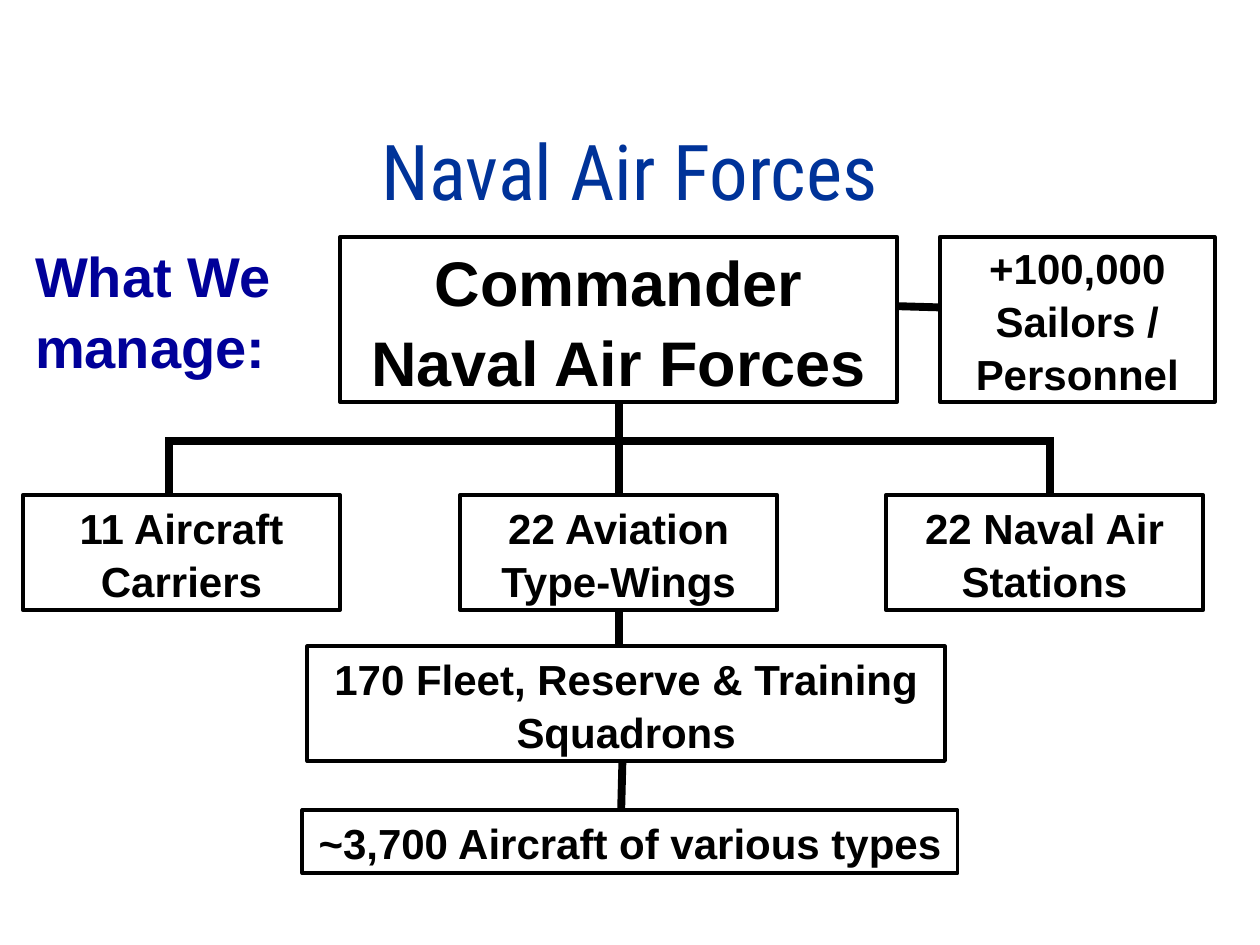
from lxml.etree import SubElement
from pptx import Presentation
from pptx.dml.color import RGBColor as RGB
from pptx.enum.shapes import MSO_CONNECTOR as CONN, MSO_SHAPE as SHAPE
from pptx.enum.text import MSO_ANCHOR as ANCHOR, PP_ALIGN as ALIGN
from pptx.oxml.ns import qn
from pptx.util import Inches, Pt

COLORS = {"title": "003399", "lead": "000099", "ink": "000000"}

prs = Presentation()
prs.slide_width, prs.slide_height = Inches(10), Inches(7.5)
s = prs.slides.add_slide(prs.slide_layouts[5])


def write(sp, text, size, color, font="Arial", bold=True, align=ALIGN.CENTER, spacing=1.05):
    tf = sp.text_frame
    tf.word_wrap = True
    tf.vertical_anchor = ANCHOR.MIDDLE
    p = tf.paragraphs[0]
    p.alignment = align
    p.line_spacing = spacing
    r = p.add_run()
    r.text = text
    r.font.name, r.font.size, r.font.bold = font, Pt(size), bold
    r.font.color.rgb = RGB.from_string(COLORS[color])


def link(x1, y1, x2, y2, begin=None, end=None):
    """Draw a thick line; begin and end name boxes joined at bottom and top."""
    c = s.shapes.add_connector(CONN.STRAIGHT, Inches(x1), Inches(y1), Inches(x2), Inches(y2))
    if begin:
        c.begin_connect(boxes[begin], 2)
    if end:
        c.end_connect(boxes[end], 0)
    c.line.color.rgb = RGB.from_string(COLORS["ink"])
    c.line.width = Pt(4.5)
    SubElement(c._element.spPr, qn("a:effectLst"))


# Title
title = s.shapes.title
title.left, title.top = 0, Inches(0.93)
title.width, title.height = prs.slide_width, Inches(0.83)
write(title, "Naval Air Forces", 44, "title", "Roboto Condensed", False, spacing=1)

# Rows of the chart: top and height
top_row, unit_row = (1.88, 1.31), (3.93, 0.91)
squadron_row, aircraft_row = (5.13, 0.91), (6.43, 0.5)
bus_y, trunk_x = 3.5, 4.91
unit_w = 2.52

# Boxes: name, left, width, row, text size, text
boxes = {}
for name, left, width, (top, height), size, text in [
    ("commander", 2.7, 4.42, top_row, 36, "Commander Naval Air Forces"),
    ("personnel", 7.46, 2.18, top_row, 24, "+100,000 Sailors / Personnel"),
    ("carriers", 0.18, unit_w, unit_row, 24, "11 Aircraft Carriers"),
    ("wings", 3.65, unit_w, unit_row, 24, "22 Aviation Type-Wings"),
    ("stations", 7.03, unit_w, unit_row, 24, "22 Naval Air Stations"),
    ("squadrons", 2.44, 5.06, squadron_row, 24, "170 Fleet, Reserve & Training Squadrons"),
    ("aircraft", 2.4, 5.2, aircraft_row, 24, "~3,700 Aircraft of various types"),
]:
    sp = s.shapes.add_shape(SHAPE.RECTANGLE, Inches(left), Inches(top), Inches(width), Inches(height))
    sp.shadow.inherit = False
    sp.fill.background()
    sp.line.color.rgb = RGB.from_string(COLORS["ink"])
    sp.line.width = Pt(2.25)
    write(sp, text, size, "ink")
    boxes[name] = sp

# Trunk from the commander down to the aircraft
link(trunk_x, sum(top_row), trunk_x, unit_row[0], "commander", "wings")
link(trunk_x, sum(unit_row), trunk_x, squadron_row[0], "wings")
link(4.94, sum(squadron_row), 4.93, aircraft_row[0])

# Horizontal bus with a drop at each end, and the side link to personnel
link(1.32, bus_y, 8.31, bus_y)
for x in (1.34, 8.33):
    link(x, bus_y - 0.03, x, unit_row[0])
link(7.12, 2.43, 7.46, 2.44)

# Lead-in text
lead = s.shapes.add_textbox(Inches(0.18), Inches(1.86), Inches(2.14), Inches(1.18))
write(lead, "What We manage:", 32, "lead", align=ALIGN.LEFT)

prs.save("out.pptx")
